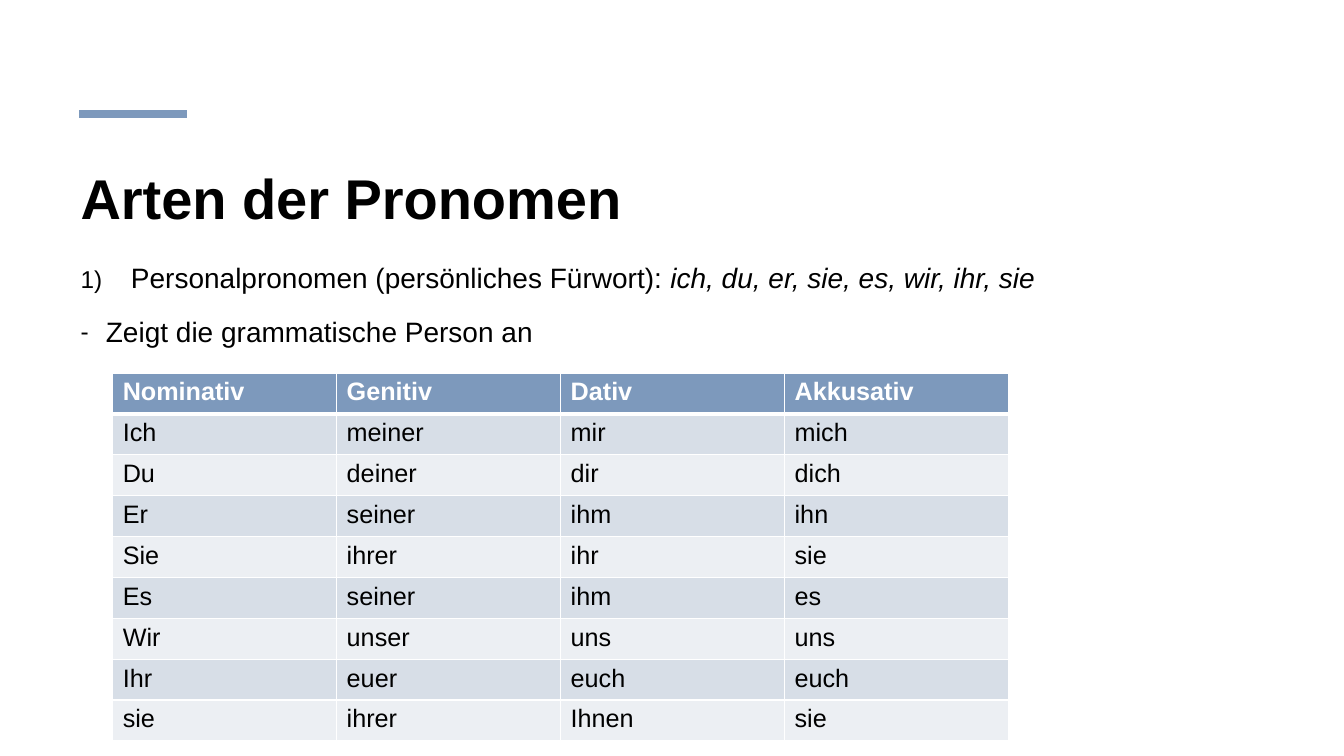
from lxml import etree
from pptx import Presentation
from pptx.dml.color import RGBColor
from pptx.enum.shapes import MSO_CONNECTOR
from pptx.oxml import parse_xml
from pptx.oxml.ns import nsdecls, qn
from pptx.util import Cm, Pt

BLUE = RGBColor(0x7D, 0x99, 0xBC)
BAND_DARK = RGBColor(0xD7, 0xDE, 0xE7)
BAND_LIGHT = RGBColor(0xEC, 0xEF, 0xF3)
BLACK = RGBColor(0, 0, 0)
WHITE = RGBColor(0xFF, 0xFF, 0xFF)


def add_run(p, text, color=BLACK, **formats):
    r = p.add_run()
    r.text = text
    r.font.name = "Arial"
    r.font.color.rgb = color
    for name, value in formats.items():
        setattr(r.font, name, value)


def add_text(s, left, top, width, height, margin_top):
    tf = s.shapes.add_textbox(Cm(left), Cm(top), Cm(width), Cm(height)).text_frame
    for name, value in {"word_wrap": True, "margin_top": Cm(margin_top)}.items():
        setattr(tf, name, value)
    return tf


prs = Presentation()
prs.slide_width, prs.slide_height = Cm(33.87), Cm(19.05)
s = prs.slides.add_slide(prs.slide_layouts[6])

accent = s.shapes.add_connector(MSO_CONNECTOR.STRAIGHT, Cm(2), Cm(2.87), Cm(4.7), Cm(2.87))
accent.line.color.rgb = BLUE
accent.line.width = Pt(6)
etree.SubElement(accent._element.spPr, qn("a:effectLst"))

title = add_text(s, 1.78, 3.81, 30.25, 3.05, 0.3)
add_run(title.paragraphs[0], "Arten der Pronomen", size=Pt(40), bold=True)

body = add_text(s, 1.78, 6.27, 30.25, 10.95, 0.13)
points = [
    (1.27, '<a:buAutoNum {} type="arabicParenR"/>',
     [("Personalpronomen (persönliches Fürwort): ", False),
      ("ich, du, er, sie, es, wir, ihr, sie", True)]),
    (0.64, '<a:buChar {} char="-"/>', [("Zeigt die grammatische Person an", False)]),
]
for i, (indent, bullet, runs) in enumerate(points):
    p = body.add_paragraph() if i else body.paragraphs[0]
    for name, value in {"line_spacing": 1.2, "space_before": Pt(10)}.items():
        setattr(p, name, value)
    pPr = p._p.get_or_add_pPr()
    pPr.set("marL", str(Cm(indent)))
    pPr.set("indent", str(-Cm(indent)))
    etree.SubElement(pPr, qn("a:buSzPct"), val="87000")
    etree.SubElement(pPr, qn("a:buFont"), typeface="Arial")
    pPr.append(parse_xml(bullet.format(nsdecls("a"))))
    for text, italic in runs:
        add_run(p, text, size=Pt(20), italic=italic)

rows = [
    ("Nominativ", "Genitiv", "Dativ", "Akkusativ"),
    ("Ich", "meiner", "mir", "mich"),
    ("Du", "deiner", "dir", "dich"),
    ("Er", "seiner", "ihm", "ihn"),
    ("Sie", "ihrer", "ihr", "sie"),
    ("Es", "seiner", "ihm", "es"),
    ("Wir", "unser", "uns", "uns"),
    ("Ihr", "euer", "euch", "euch"),
    ("sie", "ihrer", "Ihnen", "sie"),
]
table = s.shapes.add_table(len(rows), len(rows[0]), Cm(2.84), Cm(9.4),
                           Cm(22.58), Cm(1.03 * len(rows))).table
for row in table.rows:
    row.height = Cm(1.03)
for i, words in enumerate(rows):
    header = i == 0
    fill = BLUE if header else BAND_DARK if i % 2 else BAND_LIGHT
    borders = {"lnL": 1, "lnR": 1, "lnT": 3 if i == 1 else 1, "lnB": 3 if header else 1}
    for j, word in enumerate(words):
        cell = table.cell(i, j)
        tcPr = cell._tc.get_or_add_tcPr()
        for side, width in borders.items():
            ln = etree.SubElement(tcPr, qn(f"a:{side}"), w=str(Pt(width)))
            line_fill = etree.SubElement(ln, qn("a:solidFill"))
            etree.SubElement(line_fill, qn("a:srgbClr"), val=str(WHITE))
        cell.fill.solid()
        cell.fill.fore_color.rgb = fill
        add_run(cell.text_frame.paragraphs[0], word, WHITE if header else BLACK,
                size=Pt(18), bold=header)

prs.save("out.pptx")
